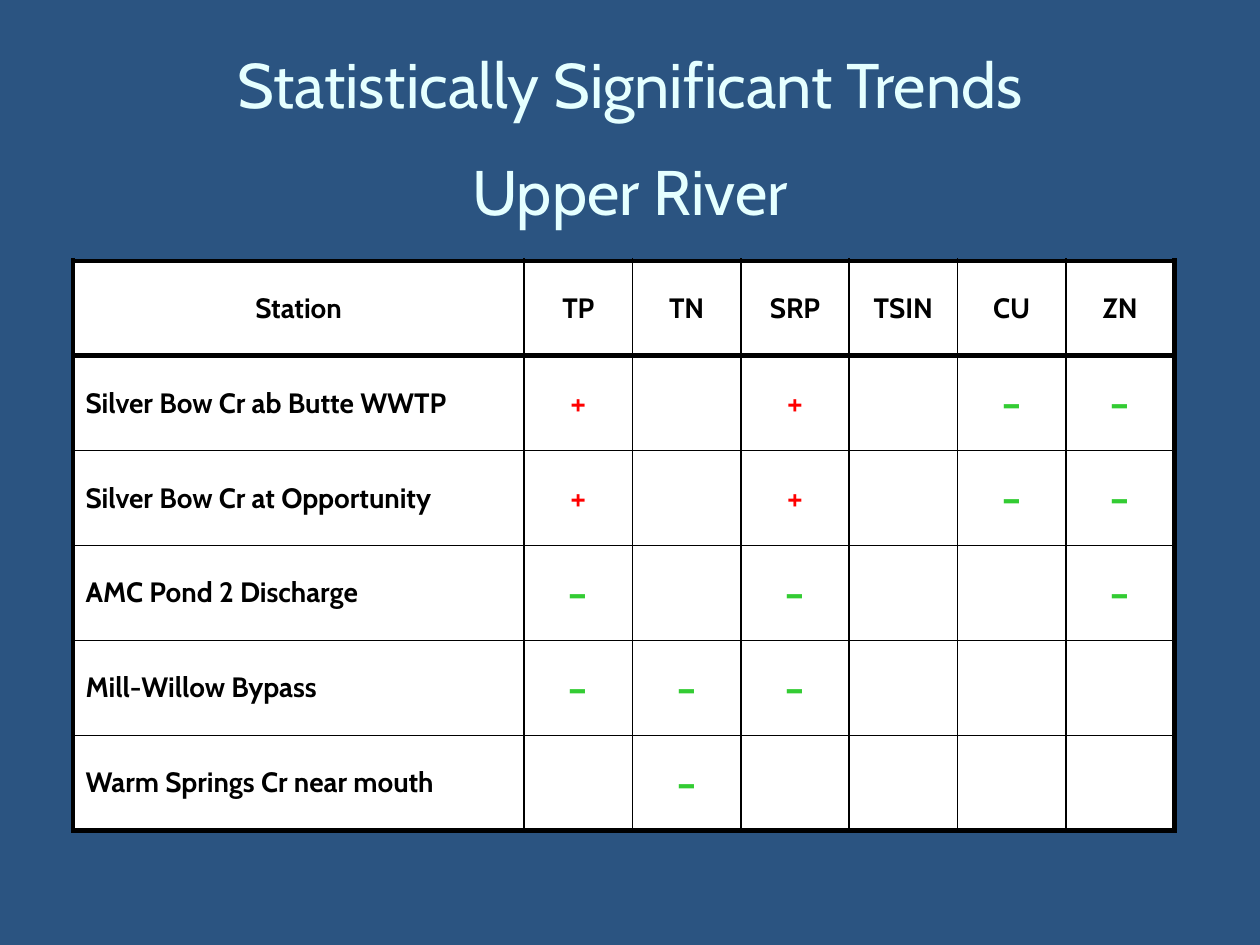
from lxml.etree import SubElement
from pptx import Presentation
from pptx.dml.color import RGBColor
from pptx.enum.text import MSO_ANCHOR as Anchor, PP_ALIGN as Align
from pptx.oxml.ns import qn
from pptx.util import Inches, Pt

TITLE = ["Statistically Significant Trends", "Upper River"]
HEADER = ["Station", "TP", "TN", "SRP", "TSIN", "CU", "ZN"]
TRENDS = [
    ("Silver Bow Cr ab Butte WWTP", {"TP": "+", "SRP": "+", "CU": "-", "ZN": "-"}),
    ("Silver Bow Cr at Opportunity", {"TP": "+", "SRP": "+", "CU": "-", "ZN": "-"}),
    ("AMC Pond 2 Discharge", {"TP": "-", "SRP": "-", "ZN": "-"}),
    ("Mill-Willow Bypass", {"TP": "-", "TN": "-", "SRP": "-"}),
    ("Warm Springs Cr near mouth", {"TN": "-"}),
]

THEME = {
    "font": "Cabin",
    "background": "2B5481",
    "cell": "FFFFFF",
    "border": "000000",
    "thin": 1,
    "thick": 3,
    "title": {"size": 36, "color": "E5FFFF", "bold": False},
    "label": {"size": 16, "color": "000000", "bold": True},
    "+": {"size": 20, "color": "FF0000", "bold": False},
    "-": {"size": 28, "color": "33CC33", "bold": False},
}

TITLE_BOX = (0.5, 0.17, 9, 1.83)
TITLE_GAP = 18
TABLE_LEFT, TABLE_TOP, TABLE_HEIGHT = 0.58, 2.07, 4.52
STATION_WIDTH, TREND_WIDTH = 3.58, 0.86


def write(p, text, style, align):
    p.alignment = align
    r = p.add_run()
    r.text = text
    values = {"name": THEME["font"], "size": Pt(style["size"]), "bold": style["bold"]}
    for name, value in values.items():
        setattr(r.font, name, value)
    r.font.color.rgb = RGBColor.from_string(style["color"])


def paint(fill, color):
    fill.solid()
    fill.fore_color.rgb = RGBColor.from_string(color)


def set_borders(cell, thick_sides):
    tc_pr = cell._tc.get_or_add_tcPr()
    for side in "LRTB":
        width = THEME["thick" if side in thick_sides else "thin"]
        ln = SubElement(tc_pr, qn(f"a:ln{side}"), w=str(Pt(width)))
        SubElement(SubElement(ln, qn("a:solidFill")), qn("a:srgbClr"), val=THEME["border"])


def add_title(s):
    tf = s.shapes.add_textbox(*map(Inches, TITLE_BOX)).text_frame
    tf.word_wrap = True
    tf.vertical_anchor = Anchor.MIDDLE
    for i, line in enumerate(TITLE):
        p = tf.add_paragraph() if i else tf.paragraphs[0]
        if i:
            p.space_before = Pt(TITLE_GAP)
        write(p, line, THEME["title"], Align.CENTER)


def add_trend_table(s):
    rows = [HEADER] + [
        [station] + [marks.get(name, "") for name in HEADER[1:]] for station, marks in TRENDS
    ]
    widths = [STATION_WIDTH] + [TREND_WIDTH] * (len(HEADER) - 1)
    last_row, last_col = len(rows) - 1, len(HEADER) - 1
    table = s.shapes.add_table(
        len(rows), len(HEADER), Inches(TABLE_LEFT), Inches(TABLE_TOP),
        Inches(sum(widths)), Inches(TABLE_HEIGHT),
    ).table
    table.first_row = table.horz_banding = False
    for column, width in zip(table.columns, widths):
        column.width = Inches(width)

    for i, row in enumerate(rows):
        for j, text in enumerate(row):
            cell = table.cell(i, j)
            cell.vertical_anchor = Anchor.MIDDLE
            edges = {"L": j == 0, "R": j == last_col, "T": i <= 1, "B": i in (0, last_row)}
            set_borders(cell, [side for side, thick in edges.items() if thick])
            paint(cell.fill, THEME["cell"])
            if text:
                align = Align.LEFT if i and j == 0 else Align.CENTER
                style = THEME[text if text in ("+", "-") else "label"]
                write(cell.text_frame.paragraphs[0], text, style, align)


def main():
    prs = Presentation()
    prs.slide_width, prs.slide_height = Inches(10), Inches(7.5)
    s = prs.slides.add_slide(prs.slide_layouts[6])
    paint(s.background.fill, THEME["background"])
    add_title(s)
    add_trend_table(s)
    prs.save("out.pptx")


if __name__ == "__main__":
    main()
